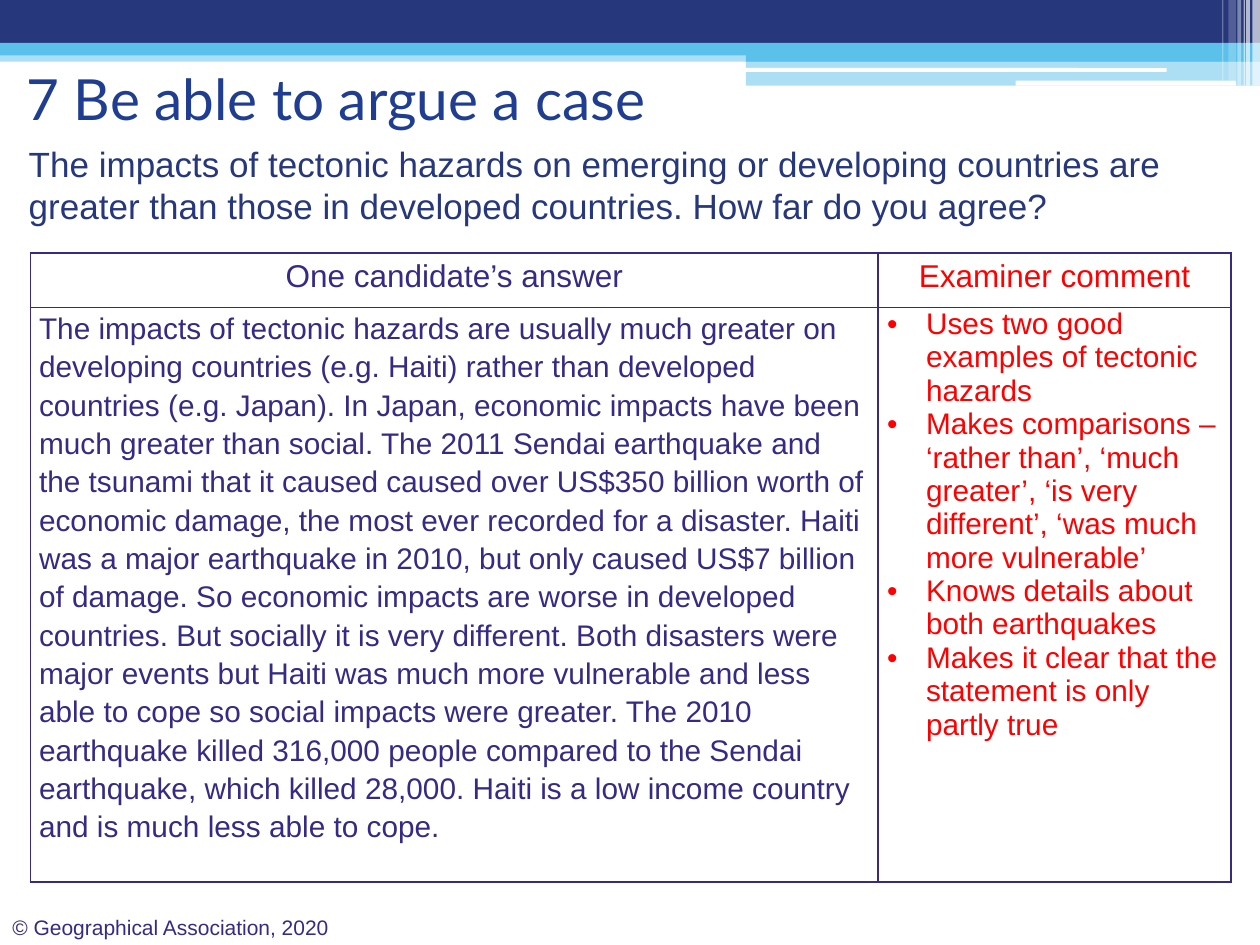
from dataclasses import dataclass

import lxml.etree
import pptx
import pptx.dml.color
import pptx.enum.shapes
import pptx.enum.text
import pptx.oxml.ns
import pptx.util

NAVY = pptx.dml.color.RGBColor(0x26, 0x37, 0x7C)
SKY = pptx.dml.color.RGBColor(0x5C, 0xC1, 0xEA)
WHITE = pptx.dml.color.RGBColor(0xFF, 0xFF, 0xFF)
TITLE_BLUE = pptx.dml.color.RGBColor(0x1F, 0x3D, 0x91)
INDIGO = pptx.dml.color.RGBColor(0x35, 0x2B, 0x84)
RED = pptx.dml.color.RGBColor(0xFF, 0x00, 0x00)

SLIDE_WIDTH = pptx.util.Inches(10)
SLIDE_HEIGHT = pptx.util.Inches(7.5)
GRID_COLUMNS, GRID_ROWS = 100, 75
RECTANGLE = pptx.enum.shapes.MSO_SHAPE.RECTANGLE
ROUNDED = pptx.enum.shapes.MSO_SHAPE.ROUNDED_RECTANGLE
CENTRE = pptx.enum.text.PP_ALIGN.CENTER
LEFT = pptx.enum.text.PP_ALIGN.LEFT


@dataclass(frozen=True)
class Area:
    column: float
    row: float
    columns: float
    rows: float

    def lengths(self) -> tuple:
        return (across(self.column), down(self.row),
                across(self.columns), down(self.rows))


@dataclass(frozen=True)
class Band:
    area: Area
    color: pptx.dml.color.RGBColor
    opacity: int = 100
    preset: pptx.enum.shapes.MSO_SHAPE = RECTANGLE


@dataclass(frozen=True)
class Style:
    size: float
    color: pptx.dml.color.RGBColor
    face: str = "Arial"
    align: pptx.enum.text.PP_ALIGN = LEFT
    spacing: float = 1.0
    bulleted: bool = False


BANDS = [
    Band(Area(0, 4, 100, 0.9), SKY, 50),
    Band(Area(0, 0, 100, 3.4), NAVY),
    Band(Area(0, 3.4, 100, 1), SKY),
    Band(Area(59.2, 3.9, 40.8, 1), SKY),
    Band(Area(59.2, 4.8, 40.8, 2), SKY, 50),
    Band(Area(59.1, 5.4, 33.5, 0.3), WHITE, preset=ROUNDED),
    Band(Area(80.6, 6.4, 17.5, 0.4), WHITE, preset=ROUNDED),
    Band(Area(99.4, 0, 0.6, 6.8), WHITE, 65),
    Band(Area(98.9, 0, 0.3, 6.8), WHITE, 65),
    Band(Area(98.7, 0, 0.1, 6.8), WHITE, 60),
    Band(Area(98.2, 0, 0.3, 6.8), WHITE, 40),
    Band(Area(97.5, 0, 0.6, 6.4), WHITE, 20),
    Band(Area(97, 0, 0.1, 6.4), WHITE, 30),
]

QUESTION = (
    "The impacts of tectonic hazards on emerging or developing countries are "
    "greater than those in developed countries. How far do you agree?"
)
ANSWER = (
    "The impacts of tectonic hazards are usually much greater on developing "
    "countries (e.g. Haiti) rather than developed countries (e.g. Japan). In "
    "Japan, economic impacts have been much greater than social. The 2011 "
    "Sendai earthquake and the tsunami that it caused caused over US$350 "
    "billion worth of economic damage, the most ever recorded for a disaster. "
    "Haiti was a major earthquake in 2010, but only caused US$7 billion of "
    "damage. So economic impacts are worse in developed countries. But "
    "socially it is very different. Both disasters were major events but "
    "Haiti was much more vulnerable and less able to cope so social impacts "
    "were greater. The 2010 earthquake killed 316,000 people compared to the "
    "Sendai earthquake, which killed 28,000. Haiti is a low income country "
    "and is much less able to cope."
)
COMMENTS = [
    "Uses two good examples of tectonic hazards",
    "Makes comparisons – ‘rather than’, ‘much greater’, ‘is very different’, "
    "‘was much more vulnerable’",
    "Knows details about both earthquakes",
    "Makes it clear that the statement is only partly true",
]

ANSWER_TABLE = Area(2.4, 20.1, 95.3, 46.9)
TABLE_COLUMNS = [67.3, 28]
TABLE_ROWS = [4.3, 42.6]
CELLS = [
    [(["One candidate’s answer"], Style(18, INDIGO, align=CENTRE, spacing=1.15)),
     (["Examiner comment"], Style(18, RED, align=CENTRE, spacing=1.15))],
    [([ANSWER], Style(17, INDIGO, spacing=1.15)),
     (COMMENTS, Style(17, RED, bulleted=True))],
]


def across(columns: float) -> pptx.util.Emu:
    return pptx.util.Emu(round(SLIDE_WIDTH * columns / GRID_COLUMNS))


def down(rows: float) -> pptx.util.Emu:
    return pptx.util.Emu(round(SLIDE_HEIGHT * rows / GRID_ROWS))


def add_element(parent, tag: str, **attributes: str):
    return lxml.etree.SubElement(parent, pptx.oxml.ns.qn(tag), attributes)


def draw_band(slide, band: Band) -> None:
    strip = slide.shapes.add_shape(band.preset, *band.area.lengths())
    strip.shadow.inherit = False
    strip.line.fill.background()
    strip.fill.solid()
    strip.fill.fore_color.rgb = band.color
    if band.opacity < 100:
        tint = strip.fill._xPr.find(".//" + pptx.oxml.ns.qn("a:srgbClr"))
        add_element(tint, "a:alpha", val=str(band.opacity * 1000))


def add_bullet(paragraph) -> None:
    properties = paragraph._p.get_or_add_pPr()
    indent = across(3.1)
    properties.set("marL", str(indent))
    properties.set("indent", str(-indent))
    add_element(properties, "a:buFont", typeface="Arial")
    add_element(properties, "a:buChar", char="•")


def write(frame, lines: list[str], style: Style) -> None:
    frame.word_wrap = True
    for position, line in enumerate(lines):
        paragraph = frame.paragraphs[0] if position == 0 else frame.add_paragraph()
        paragraph.text = line
        paragraph.alignment = style.align
        paragraph.line_spacing = style.spacing
        if style.bulleted:
            add_bullet(paragraph)
        paragraph.font.name = style.face
        paragraph.font.size = pptx.util.Pt(style.size)
        paragraph.font.bold = False
        paragraph.font.color.rgb = style.color


def draw_text(slide, area: Area, line: str, style: Style) -> None:
    box = slide.shapes.add_textbox(*area.lengths())
    write(box.text_frame, [line], style)


def add_borders(cell) -> None:
    properties = cell._tc.get_or_add_tcPr()
    for side in ("a:lnL", "a:lnR", "a:lnT", "a:lnB"):
        edge = add_element(properties, side, w=str(pptx.util.Pt(1)))
        paint = add_element(edge, "a:solidFill")
        add_element(paint, "a:srgbClr", val=str(INDIGO))


def draw_answer_table(slide) -> None:
    table = slide.shapes.add_table(
        len(TABLE_ROWS), len(TABLE_COLUMNS), *ANSWER_TABLE.lengths()).table
    table.first_row = False
    table.horz_banding = False
    for column, width in zip(table.columns, TABLE_COLUMNS):
        column.width = across(width)
    for row, height, contents in zip(table.rows, TABLE_ROWS, CELLS):
        row.height = down(height)
        for cell, (lines, style) in zip(row.cells, contents):
            cell.margin_left = cell.margin_right = across(0.7)
            cell.margin_top = cell.margin_bottom = 0
            add_borders(cell)
            cell.fill.background()
            write(cell.text_frame, lines, style)


def main() -> None:
    deck = pptx.Presentation()
    deck.slide_width, deck.slide_height = SLIDE_WIDTH, SLIDE_HEIGHT
    slide = deck.slides.add_slide(deck.slide_layouts.get_by_name("Title Only"))
    for band in BANDS:
        draw_band(slide, band)
    draw_text(slide, Area(0, 72.1, 28.7, 3), "© Geographical Association, 2020",
              Style(12, INDIGO))
    title = slide.shapes.title
    title.left, title.top, title.width, title.height = Area(1.1, 4.6, 90, 6.3).lengths()
    title.text_frame.auto_size = pptx.enum.text.MSO_AUTO_SIZE.NONE
    title.text_frame.vertical_anchor = pptx.enum.text.MSO_ANCHOR.MIDDLE
    write(title.text_frame, ["7 Be able to argue a case"],
          Style(32.4, TITLE_BLUE, face="Lato"))
    draw_answer_table(slide)
    draw_text(slide, Area(1.3, 10.8, 98.7, 7.7), QUESTION, Style(20, NAVY))
    deck.save("out.pptx")


if __name__ == "__main__":
    main()
